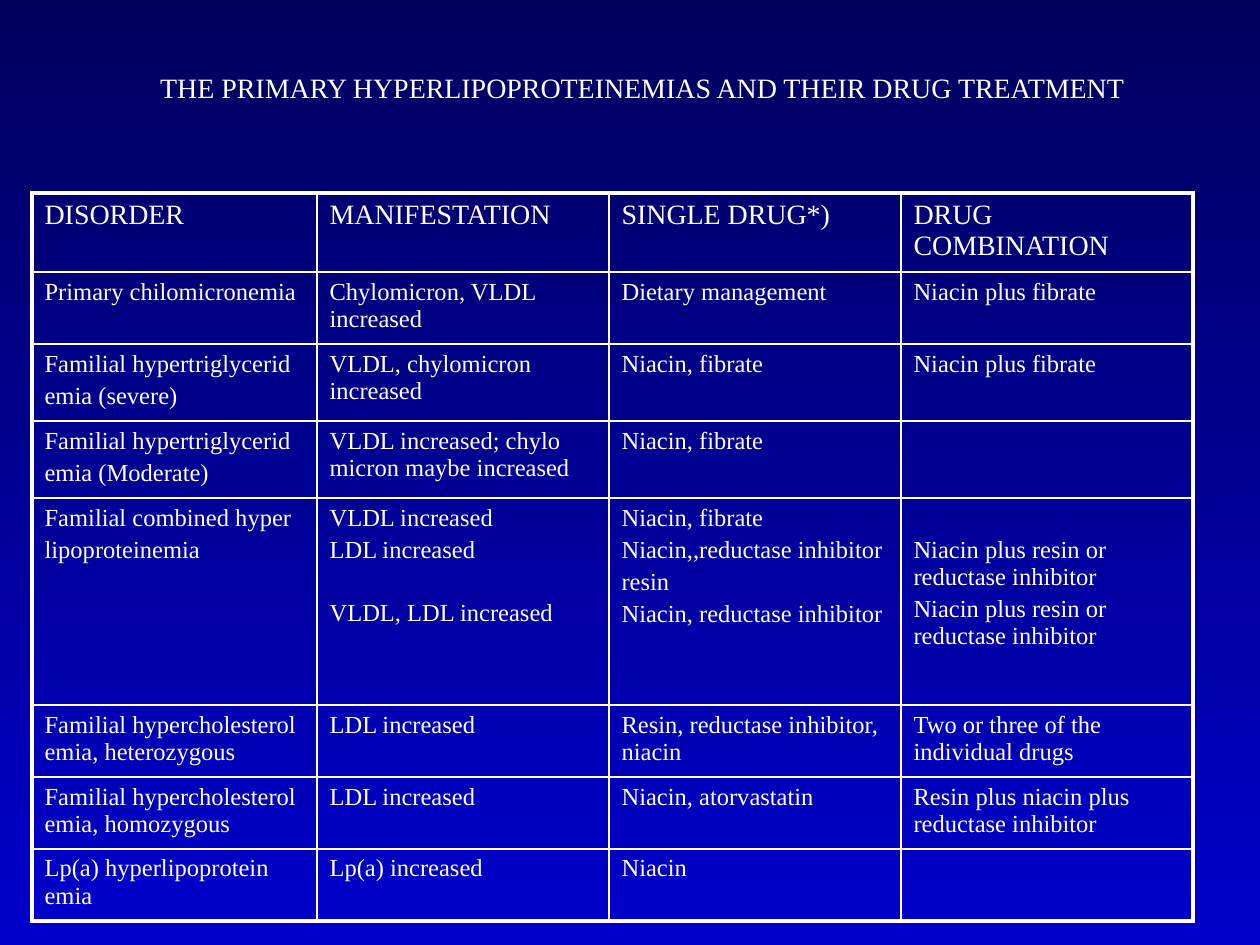
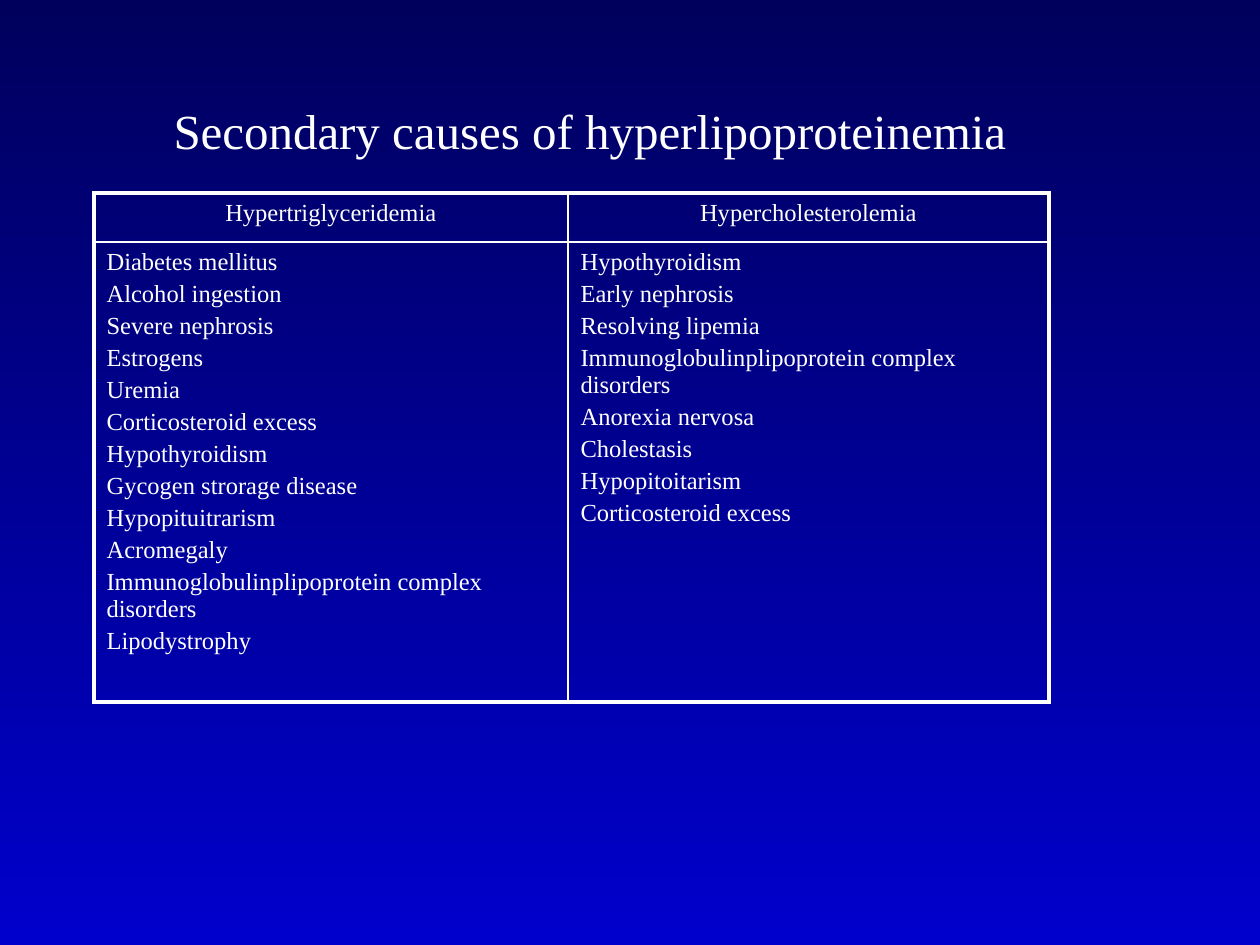
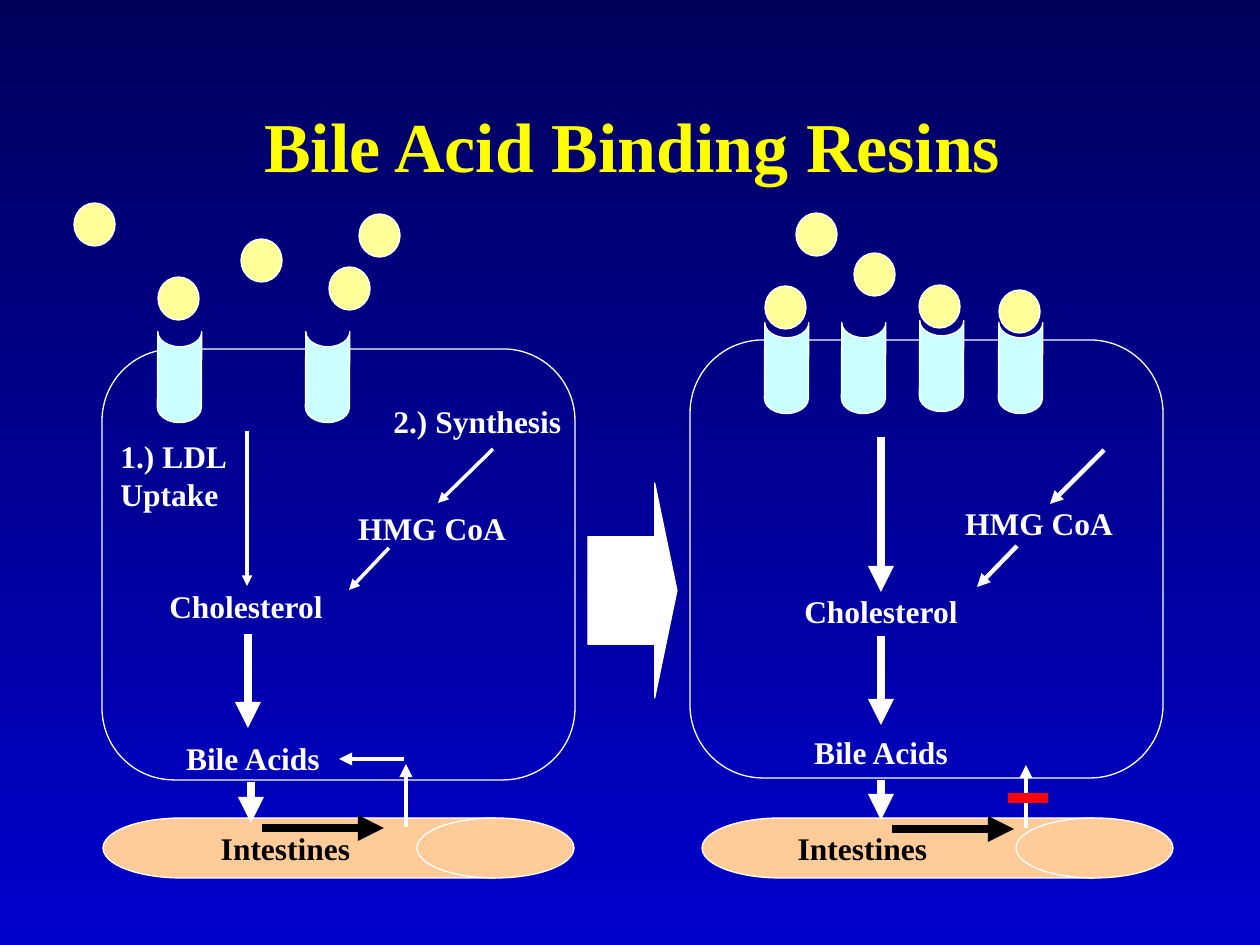
from lxml.etree import SubElement
from pptx import Presentation
from pptx.dml.color import RGBColor
from pptx.enum.shapes import MSO_CONNECTOR as Link, MSO_SHAPE as Preset
from pptx.enum.text import MSO_ANCHOR as Anchor, MSO_AUTO_SIZE as Fit, PP_ALIGN as Align
from pptx.oxml.ns import qn
from pptx.util import Pt

SCALE = 914400 / 126
FONT = "Times New Roman"
WHITE, BLACK, YELLOW, RED = "FFFFFF", "000000", "FFFF00", "FF0000"
NIGHT, ROYAL = "00005C", "0000CC"
LDL_FILL, RECEPTOR_FILL, INTESTINE_FILL = "FFFF99", "CCFFFF", "FFCC99"
PARAGRAPH_GAP, SKIPPED_LINE_GAP, SKIPPED_LINE = 2.8, 21, 32
OUTER_BORDER, INNER_BORDER = 2.25, 1

TREATMENTS = [
    ("DISORDER", "MANIFESTATION", "SINGLE DRUG*)", "DRUG COMBINATION"),
    ("Primary chilomicronemia", "Chylomicron, VLDL increased",
     "Dietary management", "Niacin plus fibrate"),
    ("Familial hypertriglycerid\nemia (severe)", "VLDL, chylomicron increased",
     "Niacin, fibrate", "Niacin plus fibrate"),
    ("Familial hypertriglycerid\nemia (Moderate)",
     "VLDL increased; chylo micron maybe increased", "Niacin, fibrate", ""),
    ("Familial combined hyper\nlipoproteinemia",
     "VLDL increased\nLDL increased\nVLDL, LDL increased",
     "Niacin, fibrate\nNiacin,,reductase inhibitor\nresin\nNiacin, reductase inhibitor",
     "Niacin plus resin or reductase inhibitor\nNiacin plus resin or reductase inhibitor"),
    ("Familial hypercholesterol emia, heterozygous", "LDL increased",
     "Resin, reductase inhibitor, niacin", "Two or three of the individual drugs"),
    ("Familial hypercholesterol emia, homozygous", "LDL increased",
     "Niacin, atorvastatin", "Resin plus niacin plus reductase inhibitor"),
    ("Lp(a) hyperlipoprotein emia", "Lp(a) increased", "Niacin", ""),
]
TREATMENT_COLUMNS = [285, 292, 292, 292]
TREATMENT_ROWS = [79, 72, 77, 77, 207, 72, 72, 72]
COMBINED_ROW = 4

CAUSES = [
    ("Hypertriglyceridemia", "Hypercholesterolemia"),
    ("Diabetes mellitus\nAlcohol ingestion\nSevere nephrosis\nEstrogens\nUremia\n"
     "Corticosteroid excess\nHypothyroidism\nGycogen strorage disease\n"
     "Hypopituitrarism\nAcromegaly\nImmunoglobulinplipoprotein complex disorders\n"
     "Lipodystrophy",
     "Hypothyroidism\nEarly nephrosis\nResolving lipemia\n"
     "Immunoglobulinplipoprotein complex disorders\nAnorexia nervosa\nCholestasis\n"
     "Hypopitoitarism\nCorticosteroid excess"),
]
CAUSE_COLUMNS = [474, 481]
CAUSE_ROWS = [49, 460]

LIVER_CELLS = [(102, 349, 473, 431), (690, 340, 473, 438)]
INTESTINES = [(103, 818, 471, 60), (702, 818, 471, 60)]
RECEPTORS = [(134, 355), (282, 355), (741, 346), (818, 346), (896, 344), (975, 346)]
LDL_PARTICLES = [
    (158, 277), (74, 203), (241, 239), (329, 267), (359, 214),
    (765, 286), (796, 213), (999, 290), (854, 253), (919, 285),
]
LABELS = [
    ("1.) LDL\vUptake", (108, 431, 242, 88), Align.LEFT, WHITE),
    ("2.) Synthesis", (381, 396, 199, 50), Align.LEFT, WHITE),
    ("HMG CoA", (323, 503, 218, 50), Align.CENTER, WHITE),
    ("Cholesterol", (125, 581, 242, 50), Align.CENTER, WHITE),
    ("Bile Acids", (122, 733, 262, 50), Align.CENTER, WHITE),
    ("Intestines", (175, 823, 221, 50), Align.CENTER, BLACK),
    ("HMG CoA", (930, 498, 218, 50), Align.CENTER, WHITE),
    ("Cholesterol", (760, 586, 242, 50), Align.CENTER, WHITE),
    ("Bile Acids", (750, 727, 262, 50), Align.CENTER, WHITE),
    ("Intestines", (752, 823, 221, 50), Align.CENTER, BLACK),
]
ARROWS = [
    ((247, 431, 247, 586), 2, WHITE),
    ((493, 449, 438, 503), 2, WHITE),
    ((389, 548, 349, 590), 2, WHITE),
    ((248, 634, 248, 728), 5, WHITE),
    ((251, 782, 251, 823), 5, WHITE),
    ((262, 828, 384, 828), 5, BLACK),
    ((406, 827, 406, 764), 2.5, WHITE),
    ((404, 759, 339, 759), 2.5, WHITE),
    ((881, 437, 881, 592), 5, WHITE),
    ((1104, 450, 1050, 504), 2.5, WHITE),
    ((1017, 546, 977, 587), 2.5, WHITE),
    ((881, 636, 881, 725), 5, WHITE),
    ((881, 780, 881, 820), 5, WHITE),
    ((892, 829, 1014, 829), 5, BLACK),
    ((1026, 828, 1026, 765), 2.5, WHITE),
]
BLOCK_BAR = (1008, 798, 1048, 798)
STEP_ARROW = (588, 483, 89, 215)


def px(*lengths):
    return [round(length * SCALE) for length in lengths]


def color(value):
    return RGBColor.from_string(value)


def write(frame, text, size=14, fill=WHITE, bold=False, align=Align.LEFT, gap=0):
    frame.word_wrap = True
    for index, line in enumerate(text.split("\n")):
        para = frame.add_paragraph() if index else frame.paragraphs[0]
        para.text = line
        para.alignment = align
        para.space_before = Pt(gap)
        for span in para.runs:
            span.font.name = FONT
            span.font.size = Pt(size)
            span.font.bold = bold
            span.font.color.rgb = color(fill)


def add_page(deck, title, area, anchor=Anchor.TOP, **style):
    page = deck.slides.add_slide(deck.slide_layouts[5])
    box = page.shapes.title
    box.left, box.top, box.width, box.height = px(*area)
    box.text_frame.auto_size = Fit.NONE
    box.text_frame.vertical_anchor = anchor
    write(box.text_frame, title, align=Align.CENTER, **style)
    return page


def set_borders(cell, row, column, last_row, last_column):
    sides = {"L": column == 0, "R": column == last_column,
             "T": row == 0, "B": row == last_row}
    props = cell._tc.get_or_add_tcPr()
    for side, outer in sides.items():
        width = Pt(OUTER_BORDER if outer else INNER_BORDER)
        edge = SubElement(props, qn("a:ln" + side), w=str(width))
        SubElement(SubElement(edge, qn("a:solidFill")), qn("a:srgbClr"), val=WHITE)


def add_grid(page, rows, left, top, widths, heights, **header):
    table = page.shapes.add_table(
        len(rows), len(widths), *px(left, top, sum(widths), sum(heights))).table
    table.first_row = table.horz_banding = False
    for column, width in zip(table.columns, px(*widths)):
        column.width = width
    for row, height in zip(table.rows, px(*heights)):
        row.height = height
    for r, texts in enumerate(rows):
        for c, text in enumerate(texts):
            cell = table.cell(r, c)
            set_borders(cell, r, c, len(rows) - 1, len(widths) - 1)
            cell.fill.background()
            write(cell.text_frame, text, gap=PARAGRAPH_GAP, **({} if r else header))
    return table


def add_figure(page, preset, area, fill=None):
    figure = page.shapes.add_shape(preset, *px(*area))
    figure.shadow.inherit = False
    figure.line.color.rgb = color(WHITE)
    figure.line.width = Pt(0.75)
    if fill:
        figure.fill.solid()
        figure.fill.fore_color.rgb = color(fill)
    else:
        figure.fill.background()
    return figure


def add_line(page, ends, width, stroke, arrow=True):
    link = page.shapes.add_connector(Link.STRAIGHT, *px(*ends))
    link.line.color.rgb = color(stroke)
    link.line.width = Pt(width)
    if arrow:
        SubElement(link.line._get_or_add_ln(), qn("a:tailEnd"), type="triangle")
    SubElement(link._element.spPr, qn("a:effectLst"))


def paint_background(deck):
    fill = deck.slide_master.background.fill
    fill.gradient()
    fill.gradient_angle = 270
    for stop, shade in zip(fill.gradient_stops, (NIGHT, ROYAL)):
        stop.color.rgb = color(shade)


def build_treatments(deck):
    page = add_page(deck, "THE PRIMARY HYPERLIPOPROTEINEMIAS AND THEIR DRUG TREATMENT",
                    (49, 64, 1187, 401), size=16)
    table = add_grid(page, TREATMENTS, 32, 193, TREATMENT_COLUMNS, TREATMENT_ROWS, size=16)
    manifestation = table.cell(COMBINED_ROW, 1)
    manifestation.text_frame.paragraphs[2].space_before = Pt(SKIPPED_LINE_GAP)
    combination = table.cell(COMBINED_ROW, 3)
    combination.margin_top += px(SKIPPED_LINE)[0]


def build_causes(deck):
    page = add_page(deck, "Secondary causes of hyperlipoproteinemia",
                    (45, 94, 1090, 72), size=28)
    add_grid(page, CAUSES, 94, 193, CAUSE_COLUMNS, CAUSE_ROWS, align=Align.CENTER)


def build_resins(deck):
    page = add_page(deck, "Bile Acid Binding Resins", (97, 66, 1071, 158),
                    anchor=Anchor.MIDDLE, size=40, fill=YELLOW, bold=True)
    for area in LIVER_CELLS:
        add_figure(page, Preset.FLOWCHART_ALTERNATE_PROCESS, area)
    for left, top in RECEPTORS:
        receptor = add_figure(page, Preset.FLOWCHART_STORED_DATA,
                              (left, top, 91, 44), RECEPTOR_FILL)
        receptor.rotation = 270.3
    for left, top in LDL_PARTICLES:
        add_figure(page, Preset.OVAL, (left, top, 41, 43), LDL_FILL)
    step = add_figure(page, Preset.RIGHT_ARROW, STEP_ARROW, WHITE)
    step.adjustments[0], step.adjustments[1] = 0.5, 0.25
    for area in INTESTINES:
        add_figure(page, Preset.FLOWCHART_DIRECT_ACCESS_STORAGE, area, INTESTINE_FILL)
    for text, area, align, fill in LABELS:
        box = page.shapes.add_textbox(*px(*area))
        write(box.text_frame, text, size=18, fill=fill, bold=True, align=align)
    for ends, width, stroke in ARROWS:
        add_line(page, ends, width, stroke)
    add_line(page, BLOCK_BAR, 6, RED, arrow=False)


def main():
    deck = Presentation()
    deck.slide_width, deck.slide_height = px(1260, 945)
    paint_background(deck)
    build_treatments(deck)
    build_causes(deck)
    build_resins(deck)
    deck.save("out.pptx")


if __name__ == "__main__":
    main()
